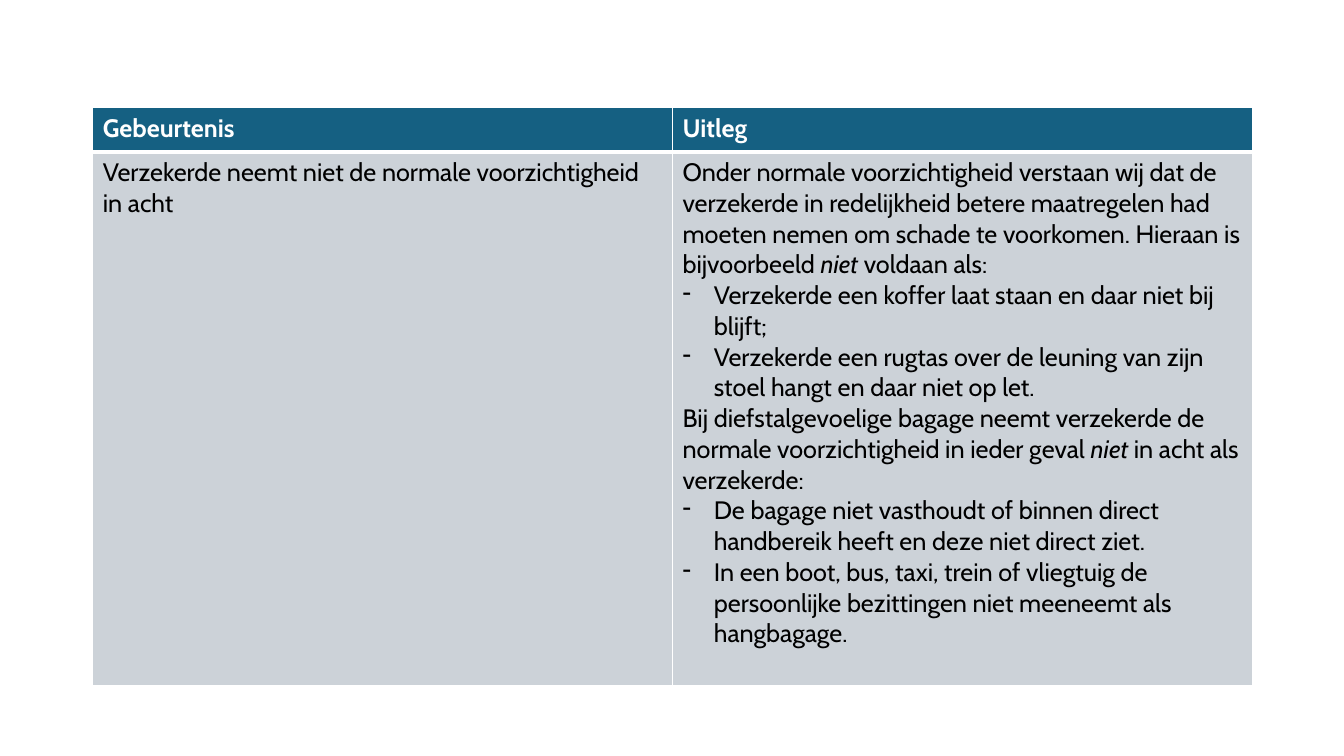
from dataclasses import dataclass

from pptx import Presentation
from pptx import util as u
from pptx.dml.color import RGBColor
from pptx.oxml.ns import qn
from lxml import etree


@dataclass(frozen=True)
class Theme:
    font: str = "Cabin"
    size: int = 18
    header_fill: str = "156082"
    body_fill: str = "CCD2D8"
    header_text: str = "FFFFFF"
    body_text: str = "000000"
    rule: str = "FFFFFF"
    thin: int = 1
    thick: int = 3
    indent: float = 0.31


class Deck:
    def __init__(self, theme, width, height):
        self.theme = theme
        self.presentation = Presentation()
        self.presentation.slide_width = u.Inches(width)
        self.presentation.slide_height = u.Inches(height)
        self.slide = self.presentation.slides.add_slide(self.presentation.slide_layouts[6])

    def table(self, left, top, column_widths, row_heights, rows):
        frame = self.slide.shapes.add_table(
            len(rows), len(column_widths), u.Inches(left), u.Inches(top),
            u.Inches(sum(column_widths)), u.Inches(sum(row_heights)))
        grid = frame.table
        for column, width in zip(grid.columns, column_widths):
            column.width = u.Inches(width)
        for row, height in zip(grid.rows, row_heights):
            row.height = u.Inches(height)
        for row_number, row in enumerate(rows):
            for column_number, paragraphs in enumerate(row):
                self.cell(grid.cell(row_number, column_number), paragraphs, row_number == 0)

    def cell(self, cell, paragraphs, is_header):
        theme = self.theme
        self.borders(cell, theme.thick if is_header else theme.thin,
                     theme.thin if is_header else theme.thick)
        cell.fill.solid()
        cell.fill.fore_color.rgb = RGBColor.from_string(
            theme.header_fill if is_header else theme.body_fill)
        for number, (bulleted, pieces) in enumerate(paragraphs):
            frame = cell.text_frame
            paragraph = frame.paragraphs[0] if number == 0 else frame.add_paragraph()
            if bulleted:
                self.bullet(paragraph)
            for wording, italic in pieces:
                self.run(paragraph, wording, italic, is_header)

    def borders(self, cell, bottom, top):
        properties = cell._tc.get_or_add_tcPr()
        widths = {"a:lnL": self.theme.thin, "a:lnR": self.theme.thin,
                  "a:lnT": top, "a:lnB": bottom}
        for edge, width in widths.items():
            line = etree.SubElement(properties, qn(edge), w=str(u.Pt(width)))
            fill = etree.SubElement(line, qn("a:solidFill"))
            etree.SubElement(fill, qn("a:srgbClr"), val=self.theme.rule)

    def bullet(self, paragraph):
        properties = paragraph._p.get_or_add_pPr()
        indent = u.Inches(self.theme.indent)
        properties.set("marL", str(indent))
        properties.set("indent", str(-indent))
        etree.SubElement(properties, qn("a:buChar"), char="-")

    def run(self, paragraph, wording, italic, is_header):
        theme = self.theme
        run = paragraph.add_run()
        run.text = wording
        formats = {"name": theme.font, "size": u.Pt(theme.size),
                   "bold": is_header, "italic": italic}
        for key, value in formats.items():
            setattr(run.font, key, value)
        run.font.color.rgb = RGBColor.from_string(
            theme.header_text if is_header else theme.body_text)


def plain(wording):
    return False, [(wording, False)]


def item(wording):
    return True, [(wording, False)]


def stressed(before, stress, after):
    return False, [(before, False), (stress, True), (after, False)]


EXPLANATION = [
    stressed("Onder normale voorzichtigheid verstaan wij dat de verzekerde in redelijkheid "
             "betere maatregelen had moeten nemen om schade te voorkomen. Hieraan is "
             "bijvoorbeeld ", "niet ", "voldaan als:"),
    item("Verzekerde een koffer laat staan en daar niet bij blijft;"),
    item("Verzekerde een rugtas over de leuning van zijn stoel hangt en daar niet op let."),
    stressed("Bij diefstalgevoelige bagage neemt verzekerde de normale voorzichtigheid "
             "in ieder geval ", "niet ", "in acht als verzekerde:"),
    item("De bagage niet vasthoudt of binnen direct handbereik heeft en deze niet direct ziet."),
    item("In een boot, bus, taxi, trein of vliegtuig de persoonlijke bezittingen "
         "niet meeneemt als hangbagage."),
]


def main():
    deck = Deck(Theme(), 13.33, 7.5)
    deck.table(0.92, 1.07, [5.75, 5.75], [0.44, 5.29], [
        [[plain("Gebeurtenis")], [plain("Uitleg")]],
        [[plain("Verzekerde neemt niet de normale voorzichtigheid in acht")], EXPLANATION],
    ])
    deck.presentation.save("out.pptx")


if __name__ == "__main__":
    main()
